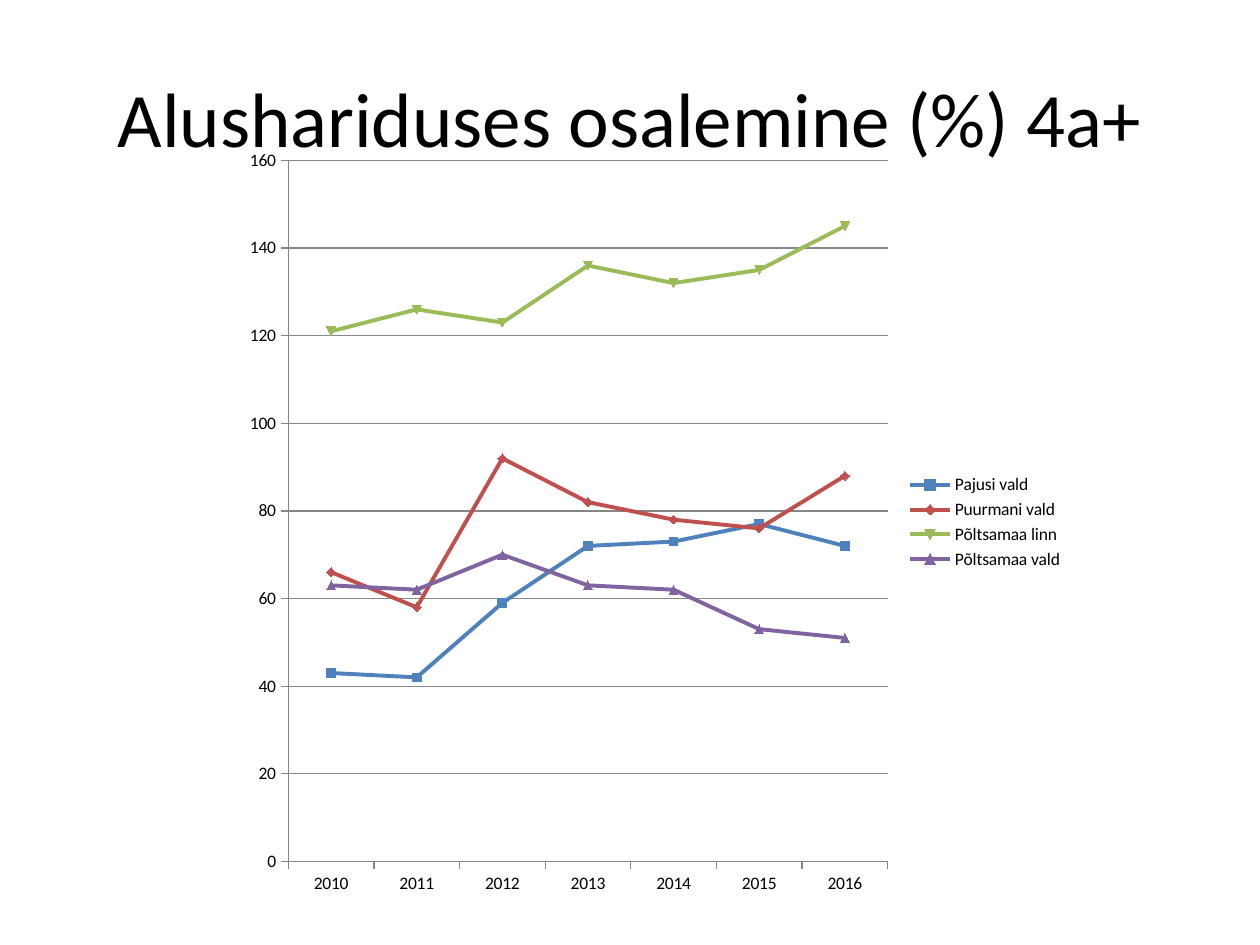
from dataclasses import dataclass

from pptx import Presentation
from pptx.chart.data import CategoryChartData
from pptx.dml.color import RGBColor
from pptx.enum.chart import XL_CHART_TYPE, XL_LEGEND_POSITION, XL_TICK_MARK
from pptx.enum.text import MSO_ANCHOR, PP_ALIGN
from pptx.util import Inches, Pt


@dataclass(frozen=True)
class Theme:
    font: str = "Calibri"
    text: str = "000000"
    grid: str = "868686"
    title_size: float = 44
    chart_size: float = 10
    line_width: float = 2.25
    grid_width: float = 0.75
    marker_size: int = 5


THEME = Theme()
WIDTH, HEIGHT = Inches(10), Inches(7.5)
TITLE_BOX = (0.05, 0.04, 0.9, 0.167)
CHART_BOX = (0.185, 0.143, 0.669, 0.819)

YEARS = [str(year) for year in range(2010, 2017)]
ATTENDANCE = [
    ("Pajusi vald", "4F81BD", (43, 42, 59, 72, 73, 77, 72)),
    ("Puurmani vald", "C0504D", (66, 58, 92, 82, 78, 76, 88)),
    ("Põltsamaa linn", "9BBB59", (121, 126, 123, 136, 132, 135, 145)),
    ("Põltsamaa vald", "8064A2", (63, 62, 70, 63, 62, 53, 51)),
]


def place(box):
    x, y, w, h = box
    return int(x * WIDTH), int(y * HEIGHT), int(w * WIDTH), int(h * HEIGHT)


def style_font(font, size):
    font.name = THEME.font
    font.size = Pt(size)
    font.color.rgb = RGBColor.from_string(THEME.text)


def style_line(line, color, width):
    line.color.rgb = RGBColor.from_string(color)
    line.width = Pt(width)


def write_text(tf, text, size, align=PP_ALIGN.LEFT, anchor=MSO_ANCHOR.TOP):
    tf.word_wrap = True
    tf.vertical_anchor = anchor
    p = tf.paragraphs[0]
    p.alignment = align
    r = p.add_run()
    r.text = text
    style_font(r.font, size)


def add_title(s, box, text):
    sp = s.shapes.title
    sp.left, sp.top, sp.width, sp.height = place(box)
    write_text(sp.text_frame, text, THEME.title_size,
               align=PP_ALIGN.CENTER, anchor=MSO_ANCHOR.MIDDLE)


def add_attendance_chart(s, box):
    data = CategoryChartData(number_format="0")
    data.categories = YEARS
    for name, _, values in ATTENDANCE:
        data.add_series(name, values)
    chart = s.shapes.add_chart(
        XL_CHART_TYPE.LINE_MARKERS, *place(box), data).chart
    chart.has_title = False
    style_font(chart.font, THEME.chart_size)
    chart.has_legend = True
    chart.legend.position = XL_LEGEND_POSITION.RIGHT
    chart.legend.include_in_layout = False

    for axis in (chart.category_axis, chart.value_axis):
        axis.major_tick_mark = XL_TICK_MARK.OUTSIDE
        axis.minor_tick_mark = XL_TICK_MARK.NONE
        style_line(axis.format.line, THEME.grid, THEME.grid_width)
    axis = chart.value_axis
    axis.minimum_scale, axis.maximum_scale, axis.major_unit = 0, 160, 20
    axis.has_major_gridlines = True
    style_line(axis.major_gridlines.format.line, THEME.grid, THEME.grid_width)
    axis.tick_labels.number_format = "#,##0"
    axis.tick_labels.number_format_is_linked = False

    plot = chart.plots[0]
    plot.vary_by_categories = False
    for series, (_, color, _) in zip(plot.series, ATTENDANCE):
        series.smooth = False
        style_line(series.format.line, color, THEME.line_width)
        marker = series.marker
        marker.size = THEME.marker_size
        marker.format.fill.solid()
        marker.format.fill.fore_color.rgb = RGBColor.from_string(color)
        style_line(marker.format.line, color, THEME.grid_width)


def main():
    prs = Presentation()
    prs.slide_width, prs.slide_height = WIDTH, HEIGHT
    s = prs.slides.add_slide(prs.slide_layouts.get_by_name("Title Only"))
    add_title(s, TITLE_BOX, "Alushariduses osalemine (%) 4a+")
    add_attendance_chart(s, CHART_BOX)
    prs.save("out.pptx")


if __name__ == "__main__":
    main()
